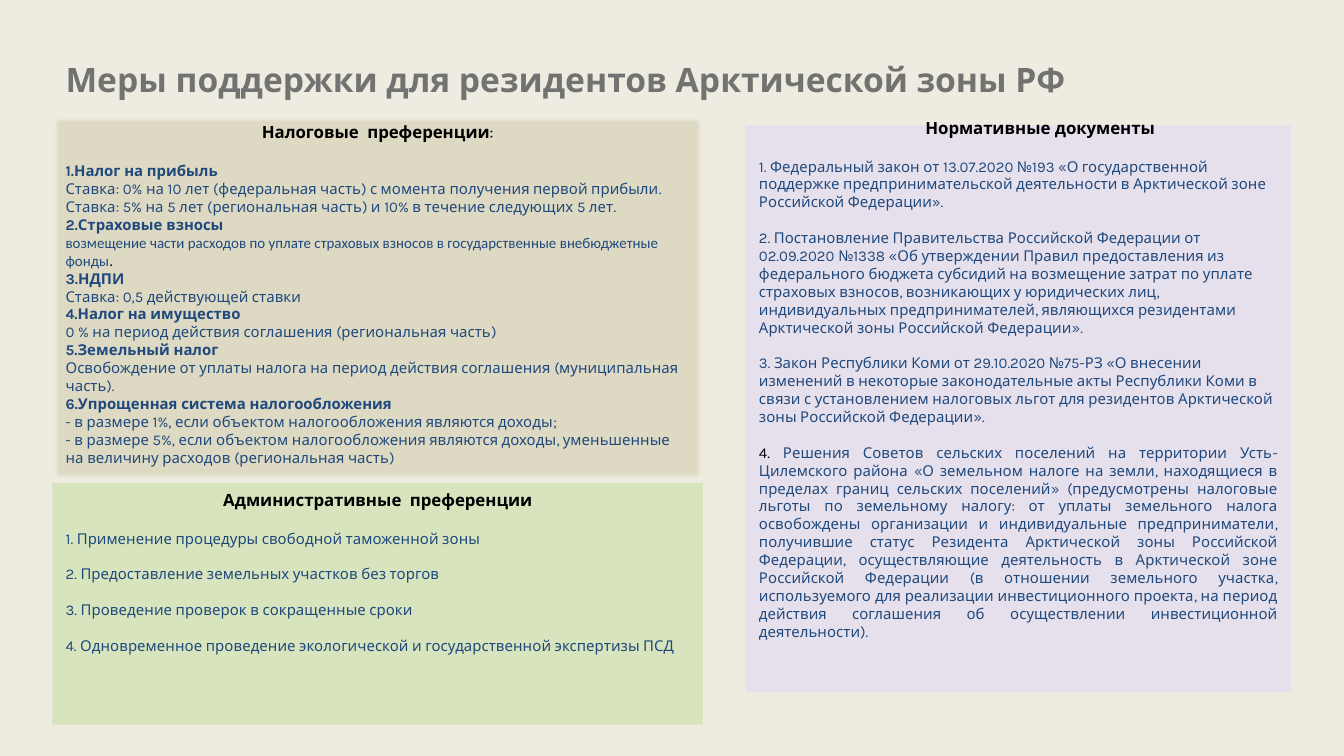
from lxml import etree
from pptx import Presentation
from pptx.dml.color import RGBColor
from pptx.enum.shapes import MSO_SHAPE
from pptx.enum.text import MSO_ANCHOR, PP_ALIGN
from pptx.oxml.ns import qn
from pptx.util import Pt

RECT = MSO_SHAPE.RECTANGLE
TOP, MIDDLE = MSO_ANCHOR.TOP, MSO_ANCHOR.MIDDLE
LEFT, CENTER, JUSTIFY = PP_ALIGN.LEFT, PP_ALIGN.CENTER, PP_ALIGN.JUSTIFY
BLUE, BLACK, GRAY = "1F497D", "000000", "727271"
HEAD_GAP, ITEM_GAP = 10.5, 9.6
COLUMN_X, COLUMN_W = 28.1, 348.5


def color(value):
    return RGBColor.from_string(value)


class Deck:
    font = "Karla"

    def __init__(self, width, height, background):
        self.prs = Presentation()
        self.prs.slide_width, self.prs.slide_height = Pt(width), Pt(height)
        self.s = self.prs.slides.add_slide(self.prs.slide_layouts[6])
        fill = self.s.background.fill
        fill.solid()
        fill.fore_color.rgb = color(background)

    def run(self, p, text, size=8, fill=BLUE, bold=False, font=None):
        r = p.add_run()
        r.text = text
        r.font.name = font or self.font
        r.font.size, r.font.bold = Pt(size), bold
        r.font.color.rgb = color(fill)

    def paragraph(self, tf, align=LEFT, before=0, margin=0, indent=0):
        p = tf.paragraphs[0]
        if p.runs:
            p = tf.add_paragraph()
        p.alignment = align
        if before:
            p.space_before = Pt(before)
        if indent:
            pPr = p._p.get_or_add_pPr()
            pPr.set("marL", str(Pt(margin)))
            pPr.set("indent", str(Pt(indent)))
        return p

    def title(self, text, x, y, w, h):
        tf = self.s.shapes.add_textbox(Pt(x), Pt(y), Pt(w), Pt(h)).text_frame
        tf.word_wrap = True
        self.run(self.paragraph(tf), text, 18, GRAY, True)

    def panel(self, x, y, w, h, fill, anchor=TOP, bottom=3.6, soft=0):
        sp = self.s.shapes.add_shape(RECT, Pt(x), Pt(y), Pt(w), Pt(h))
        sp.shadow.inherit = False
        sp.fill.solid()
        sp.fill.fore_color.rgb = color(fill)
        sp.line.fill.background()
        if soft:
            effects = sp._element.spPr.find(qn("a:effectLst"))
            etree.SubElement(effects, qn("a:softEdge"), rad=str(Pt(soft)))
        tf = sp.text_frame
        tf.word_wrap = True
        tf.vertical_anchor = anchor
        tf.margin_bottom = Pt(bottom)
        return tf

    def heading(self, tf, text, indent=0):
        p = self.paragraph(tf, CENTER, indent=indent)
        self.run(p, text, 9, BLACK, True)
        return p


TAXES = [
    ("1.Налог на прибыль", [
        "Ставка: 0% на 10 лет (федеральная часть) с момента получения первой прибыли.",
        "Ставка: 5% на 5 лет (региональная часть) и 10% в течение следующих 5 лет."]),
    ("2.Страховые взносы", []),
    ("3.НДПИ", ["Ставка: 0,5 действующей ставки"]),
    ("4.Налог на имущество", ["0 % на период действия соглашения (региональная часть)"]),
    ("5.Земельный налог", [
        "Освобождение от уплаты налога на период действия соглашения (муниципальная часть)."]),
    ("6.Упрощенная система налогообложения", [
        "- в размере 1%, если объектом налогообложения являются доходы;",
        "- в размере 5%, если объектом налогообложения являются доходы, уменьшенные "
        "на величину расходов (региональная часть)"]),
]
INSURANCE = ("возмещение части расходов по уплате страховых взносов "
             "в государственные внебюджетные фонды")
ADMIN = [
    "1. Применение процедуры свободной таможенной зоны",
    "2. Предоставление земельных участков без торгов",
    "3. Проведение проверок в сокращенные сроки",
    "4. Одновременное проведение экологической и государственной экспертизы ПСД",
]
LAWS = [
    "1. Федеральный закон от 13.07.2020 №193 «О государственной поддержке "
    "предпринимательской деятельности в Арктической зоне Российской Федерации».",
    "2. Постановление Правительства Российской Федерации от 02.09.2020 №1338 "
    "«Об утверждении Правил предоставления из федерального бюджета субсидий на "
    "возмещение затрат по уплате страховых взносов, возникающих у юридических лиц, "
    "индивидуальных предпринимателей, являющихся резидентами Арктической зоны "
    "Российской Федерации».",
    "3. Закон Республики Коми от 29.10.2020 №75-РЗ «О внесении изменений в некоторые "
    "законодательные акты Республики Коми в связи с установлением налоговых льгот для "
    "резидентов Арктической зоны Российской Федерации».",
]
COUNCILS = (
    "Решения Советов сельских поселений на территории Усть-Цилемского района "
    "«О земельном налоге на земли, находящиеся в пределах границ сельских поселений» "
    "(предусмотрены налоговые льготы по земельному налогу: от уплаты земельного налога "
    "освобождены организации и индивидуальные предприниматели, получившие статус "
    "Резидента Арктической зоны Российской Федерации, осуществляющие деятельность в "
    "Арктической зоне Российской Федерации (в отношении земельного участка, "
    "используемого для реализации инвестиционного проекта, на период действия "
    "соглашения об осуществлении инвестиционной деятельности).")


def main():
    deck = Deck(720, 405, "EEECE1")
    deck.title("Меры поддержки для резидентов Арктической зоны РФ", COLUMN_X, 28.1, 663.8, 28.8)

    tf = deck.panel(COLUMN_X, 61.9, COLUMN_W, 195.1, "DDD9C3", soft=2.5)
    p = deck.heading(tf, "Налоговые  преференции")
    deck.run(p, ":", 9, BLACK)
    for i, (tax, terms) in enumerate(TAXES):
        p = deck.paragraph(tf, before=0 if i else HEAD_GAP)
        deck.run(p, tax, bold=True)
        for term in terms:
            deck.run(deck.paragraph(tf), term)
        if not terms:
            p = deck.paragraph(tf)
            deck.run(p, INSURANCE, font="Calibri")
            deck.run(p, ".", fill=BLACK, font="Calibri")

    tf = deck.panel(COLUMN_X, 258.7, COLUMN_W, 129.6, "D7E4BD")
    deck.heading(tf, "Административные  преференции")
    for i, item in enumerate(ADMIN):
        p = deck.paragraph(tf, before=ITEM_GAP if i else HEAD_GAP, margin=18, indent=-18)
        deck.run(p, item)

    tf = deck.panel(399.5, 67.2, 292.4, 303.8, "E6E0EC", MIDDLE, 36)
    deck.heading(tf, "Нормативные документы", 23)
    for i, law in enumerate(LAWS):
        deck.run(deck.paragraph(tf, before=ITEM_GAP if i else HEAD_GAP), law)
    p = deck.paragraph(tf, JUSTIFY, ITEM_GAP)
    deck.run(p, "4. ", fill=BLACK)
    deck.run(p, COUNCILS)

    deck.prs.save("out.pptx")


if __name__ == "__main__":
    main()
